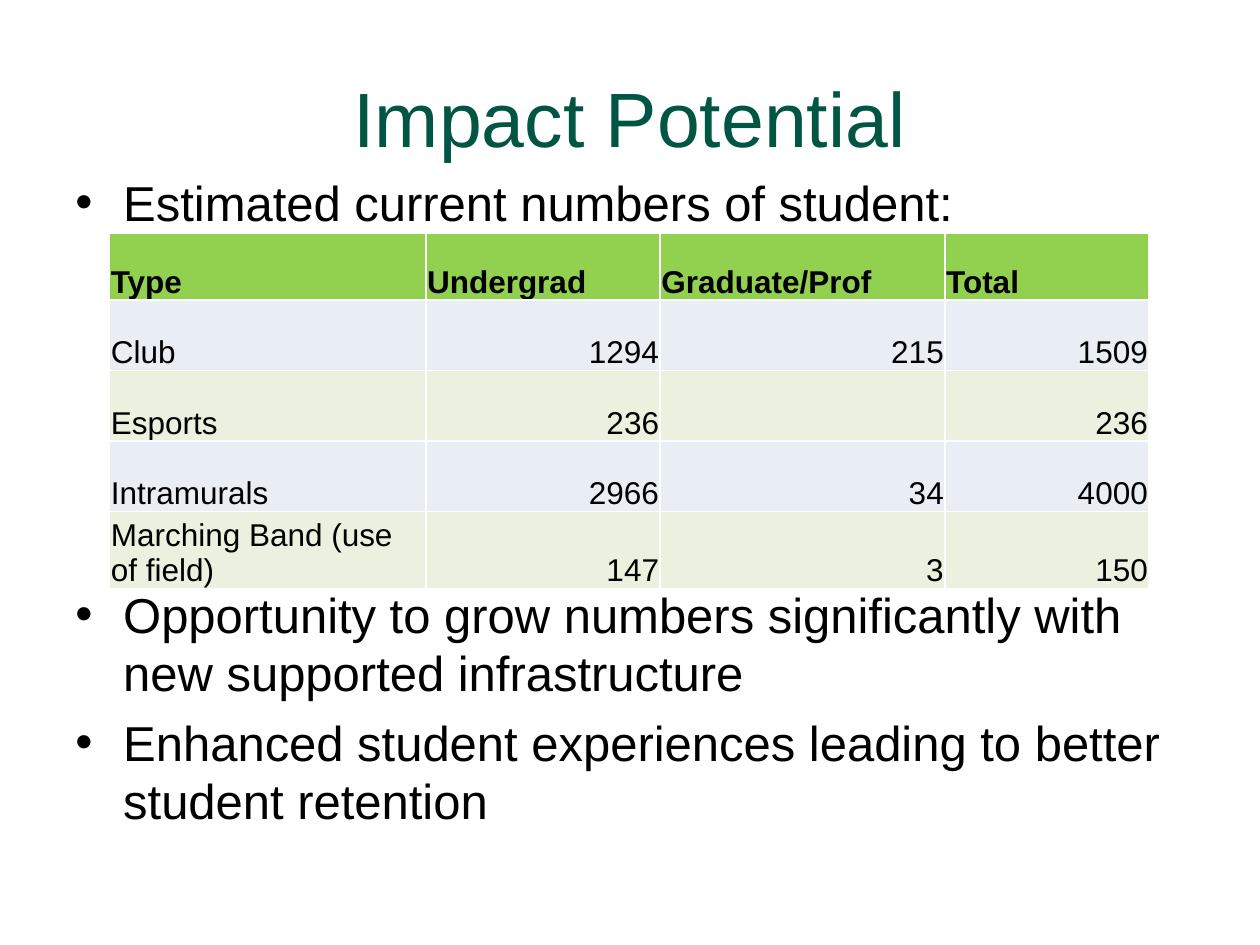
from pptx import Presentation
from pptx.dml.color import RGBColor
from pptx.enum import text
from pptx.oxml import parse_xml
from pptx.oxml.ns import nsdecls
from pptx.util import Inches, Pt

FONT = "Arial"
GREEN = RGBColor(0x00, 0x56, 0x43)
BLACK = RGBColor(0, 0, 0)
HEADER_FILL = RGBColor(0x92, 0xD0, 0x50)
BAND_FILLS = [RGBColor(0xE9, 0xED, 0xF4), RGBColor(0xEB, 0xF1, 0xDE)]

COLUMN_WIDTHS = [2.51, 1.86, 2.26, 1.62]
HEADER_HEIGHT = 0.53
STUDENT_NUMBERS = [
    ["Type", "Undergrad", "Graduate/Prof", "Total"],
    ["Club", "1294", "215", "1509"],
    ["Esports", "236", "", "236"],
    ["Intramurals", "2966", "34", "4000"],
    ["Marching Band (use of field)", "147", "3", "150"],
]


def style(paragraph, size, color=BLACK, bold=False):
    font = paragraph.font
    font.name, font.size, font.bold = FONT, Pt(size), bold
    font.color.rgb = color


def add_text_frame(slide, left, top, width, height):
    box = slide.shapes.add_textbox(Inches(left), Inches(top), Inches(width), Inches(height))
    box.text_frame.word_wrap = True
    return box.text_frame


def add_title(slide, left, top, width, height, title):
    frame = add_text_frame(slide, left, top, width, height)
    frame.vertical_anchor = text.MSO_ANCHOR.MIDDLE
    paragraph = frame.paragraphs[0]
    paragraph.text = title
    paragraph.alignment = text.PP_ALIGN.CENTER
    style(paragraph, 44, GREEN)


def add_bullets(slide, left, top, width, height, points):
    frame = add_text_frame(slide, left, top, width, height)
    for index, point in enumerate(points):
        paragraph = frame.add_paragraph() if index else frame.paragraphs[0]
        paragraph.text = point
        paragraph.line_spacing = Pt(33.4)
        if index:
            paragraph.space_before = Pt(6.4)
        properties = paragraph._p.get_or_add_pPr()
        properties.set("marL", str(Inches(0.38)))
        properties.set("indent", str(-Inches(0.38)))
        properties.append(parse_xml(f'<a:buFont {nsdecls("a")} typeface="{FONT}"/>'))
        properties.append(parse_xml(f'<a:buChar {nsdecls("a")} char="•"/>'))
        style(paragraph, 28)


def add_white_borders(cell):
    properties = cell._tc.get_or_add_tcPr()
    for position, side in enumerate(["lnL", "lnR", "lnT", "lnB"]):
        properties.insert(position, parse_xml(
            f'<a:{side} {nsdecls("a")} w="{Pt(1)}"><a:solidFill>'
            f'<a:srgbClr val="FFFFFF"/></a:solidFill></a:{side}>'))


def fill_cell(cell, value, fill, bold, alignment):
    cell.text = value
    cell.vertical_anchor = text.MSO_ANCHOR.BOTTOM
    cell.margin_left = cell.margin_right = cell.margin_top = Inches(0.01)
    cell.margin_bottom = 0
    cell.fill.solid()
    cell.fill.fore_color.rgb = fill
    add_white_borders(cell)
    paragraph = cell.text_frame.paragraphs[0]
    paragraph.alignment = alignment
    style(paragraph, 18, bold=bold)


def add_numbers_table(slide, left, top, width, height):
    row_count = len(STUDENT_NUMBERS)
    table = slide.shapes.add_table(
        row_count, len(COLUMN_WIDTHS),
        Inches(left), Inches(top), Inches(width), Inches(height)).table
    for column, column_width in zip(table.columns, COLUMN_WIDTHS):
        column.width = Inches(column_width)
    body_height = (height - HEADER_HEIGHT) / (row_count - 1)
    for r, values in enumerate(STUDENT_NUMBERS):
        is_header = r == 0
        table.rows[r].height = Inches(HEADER_HEIGHT if is_header else body_height)
        fill = HEADER_FILL if is_header else BAND_FILLS[(r - 1) % 2]
        for c, value in enumerate(values):
            alignment = text.PP_ALIGN.LEFT if is_header or c == 0 else text.PP_ALIGN.RIGHT
            fill_cell(table.cell(r, c), value, fill, is_header, alignment)


def main():
    prs = Presentation()
    prs.slide_width, prs.slide_height = Inches(10), Inches(7.5)
    slide = prs.slides.add_slide(prs.slide_layouts[6])
    add_title(slide, 0.5, 0.3, 9, 1.25, "Impact Potential")
    add_bullets(slide, 0.5, 1.32, 9, 0.53, ["Estimated current numbers of student:"])
    add_bullets(slide, 0.5, 4.59, 9, 2, [
        "Opportunity to grow numbers significantly with new supported infrastructure",
        "Enhanced student experiences leading to better student retention",
    ])
    add_numbers_table(slide, 0.87, 1.85, 8.25, 2.77)
    prs.save("out.pptx")


if __name__ == "__main__":
    main()
